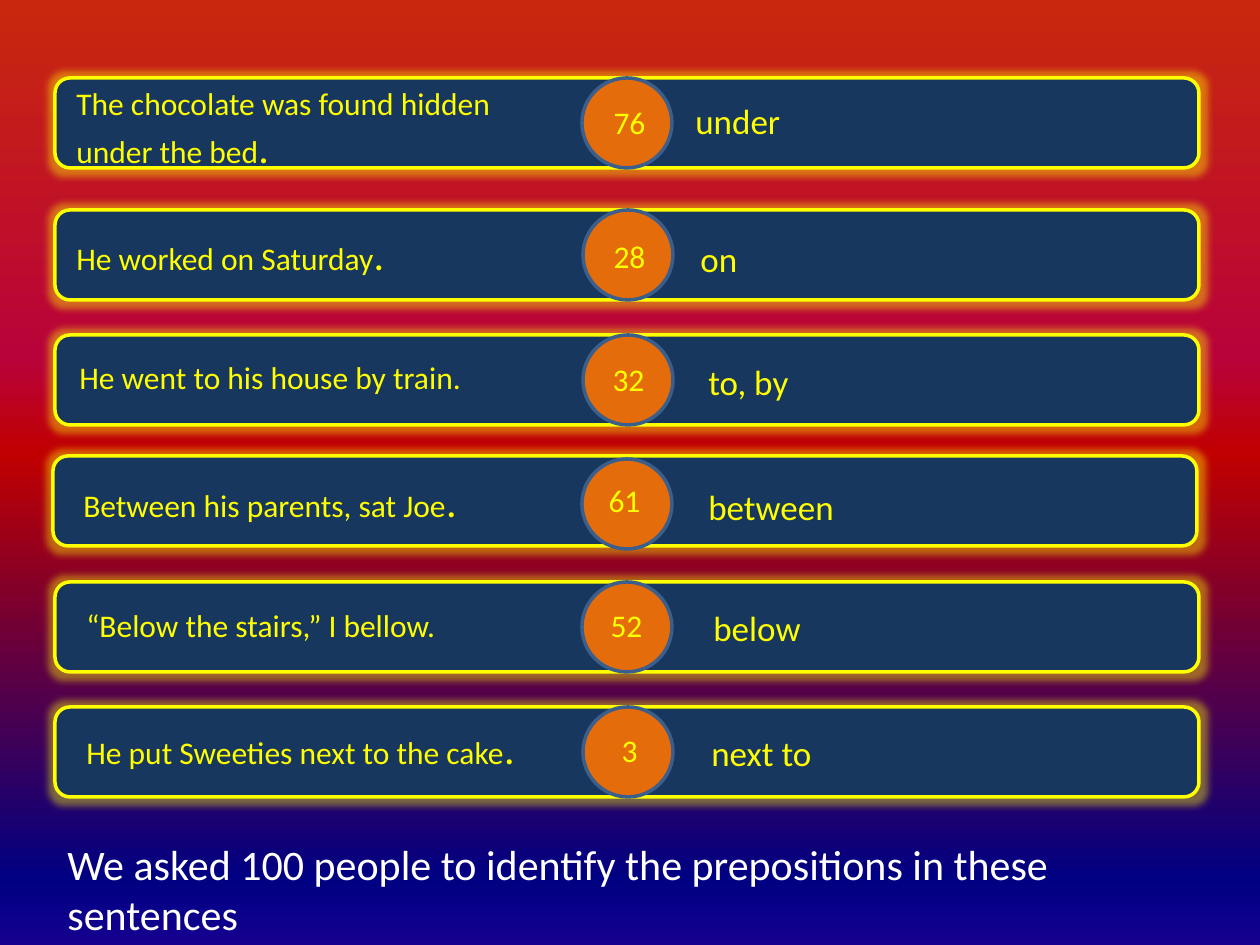
from dataclasses import dataclass

from lxml import etree
from pptx import Presentation
from pptx import util as u
from pptx.dml.color import RGBColor
from pptx.enum import shapes, text
from pptx.oxml.ns import qn

EMU_PER_PX = 914400 / 126
FONT = "Calibri"

NAVY = RGBColor(0x17, 0x37, 0x5E)
YELLOW = RGBColor(0xFF, 0xFF, 0x00)
ORANGE = RGBColor(0xE4, 0x6C, 0x0A)
STEEL = RGBColor(0x3A, 0x5F, 0x8C)
WHITE = RGBColor(0xFF, 0xFF, 0xFF)
BACKGROUND_STOPS = [
    (0, RGBColor(0xC9, 0x28, 0x0D)),
    (38, RGBColor(0xB8, 0x02, 0x3A)),
    (48, RGBColor(0xC0, 0x00, 0x00)),
    (93, RGBColor(0x00, 0x00, 0x82)),
    (100, RGBColor(0x15, 0x00, 0x90)),
]

BAR_W, BAR_H = 1144, 90
COUNT_W, ANSWER_W, LINE_H = 59, 200, 50


@dataclass
class Row:
    """One survey answer; every position is (left, top) in px."""
    sentence: str
    count: str
    answer: str
    bar: tuple[int, int]
    circle: tuple[int, int]
    sentence_at: tuple[int, int]
    count_at: tuple[int, int]
    answer_at: tuple[int, int]
    sentence_w: int = 504
    sentence_h: int = 63
    big_stop: bool = True


ROWS = [
    Row("The chocolate was found hidden under the bed", "76", "under",
        (55, 78), (582, 78), (64, 78), (600, 97), (683, 93), sentence_h=102),
    Row("He worked on Saturday", "28", "on",
        (55, 210), (583, 210), (64, 222), (600, 231), (688, 231)),
    Row("He went to his house by train.", "32", "to, by",
        (55, 335), (583, 335), (67, 352), (599, 354), (696, 354),
        sentence_h=LINE_H, big_stop=False),
    Row("Between his parents, sat Joe", "61", "between",
        (53, 456), (582, 459), (71, 469), (595, 475), (696, 479)),
    Row("“Below the stairs,” I bellow.", "52", "below",
        (55, 582), (582, 582), (74, 600), (597, 600), (701, 600),
        sentence_h=LINE_H, big_stop=False),
    Row("He put Sweeties next to the cake", "3", "next to",
        (55, 707), (583, 707), (74, 716), (600, 725), (699, 725)),
]


def px(n: int) -> u.Emu:
    return u.Emu(round(n * EMU_PER_PX))


def add_color(parent, color: RGBColor, alpha: int | None = None) -> None:
    clr = etree.SubElement(parent, qn("a:srgbClr"), val=str(color))
    if alpha is not None:
        etree.SubElement(clr, qn("a:alpha"), val=str(alpha * 1000))


def paint_background(slide) -> None:
    fill = slide.background.fill
    fill.gradient()
    fill.gradient_angle = 270
    stops = slide.element.xpath(".//p:bg//a:gsLst")[0]
    for stop in list(stops):
        stops.remove(stop)
    for pos, color in BACKGROUND_STOPS:
        gs = etree.SubElement(stops, qn("a:gs"), pos=str(pos * 1000))
        add_color(gs, color)


def add_box(slide, kind, at: tuple[int, int], w: int, h: int,
            fill: RGBColor, line: RGBColor):
    sp = slide.shapes.add_shape(kind, px(at[0]), px(at[1]), px(w), px(h))
    sp.fill.solid()
    sp.fill.fore_color.rgb = fill
    sp.line.color.rgb = line
    sp.line.width = u.Pt(2)
    sp.shadow.inherit = False
    return sp


def add_glow(sp, color: RGBColor) -> None:
    effects = sp.element.spPr.find(qn("a:effectLst"))
    glow = etree.SubElement(effects, qn("a:glow"), rad=str(u.Pt(8)))
    add_color(glow, color, alpha=40)


def add_text(slide, at: tuple[int, int], w: int, h: int,
             runs: list[tuple[str, int]], color: RGBColor = YELLOW,
             align=text.PP_ALIGN.LEFT) -> None:
    sp = slide.shapes.add_textbox(px(at[0]), px(at[1]), px(w), px(h))
    tf = sp.text_frame
    tf.word_wrap = True
    p = tf.paragraphs[0]
    p.alignment = align
    for words, size in runs:
        r = p.add_run()
        r.text = words
        r.font.name = FONT
        r.font.size = u.Pt(size)
        r.font.color.rgb = color


def add_row(slide, row: Row) -> None:
    # Glowing bar with the count circle on top
    bar = add_box(slide, shapes.MSO_SHAPE.ROUNDED_RECTANGLE, row.bar,
                  BAR_W, BAR_H, NAVY, YELLOW)
    add_glow(bar, YELLOW)
    add_box(slide, shapes.MSO_SHAPE.OVAL, row.circle, BAR_H, BAR_H, ORANGE, STEEL)

    # Sentence, count and preposition
    runs = [(row.sentence, 18)]
    if row.big_stop:
        runs.append((".", 24))
    add_text(slide, row.sentence_at, row.sentence_w, row.sentence_h, runs)
    add_text(slide, row.count_at, COUNT_W, LINE_H, [(row.count, 18)],
             align=text.PP_ALIGN.CENTER)
    add_text(slide, row.answer_at, ANSWER_W, LINE_H, [(row.answer, 20)])


def main() -> None:
    prs = Presentation()
    prs.slide_width, prs.slide_height = px(1260), px(945)
    slide = prs.slides.add_slide(prs.slide_layouts[6])
    paint_background(slide)

    for row in ROWS:
        add_row(slide, row)

    # Survey question
    add_text(slide, (55, 832), 1032, 113,
             [("We asked 100 people to identify the prepositions in these sentences", 24)],
             color=WHITE)
    prs.save("out.pptx")


if __name__ == "__main__":
    main()
